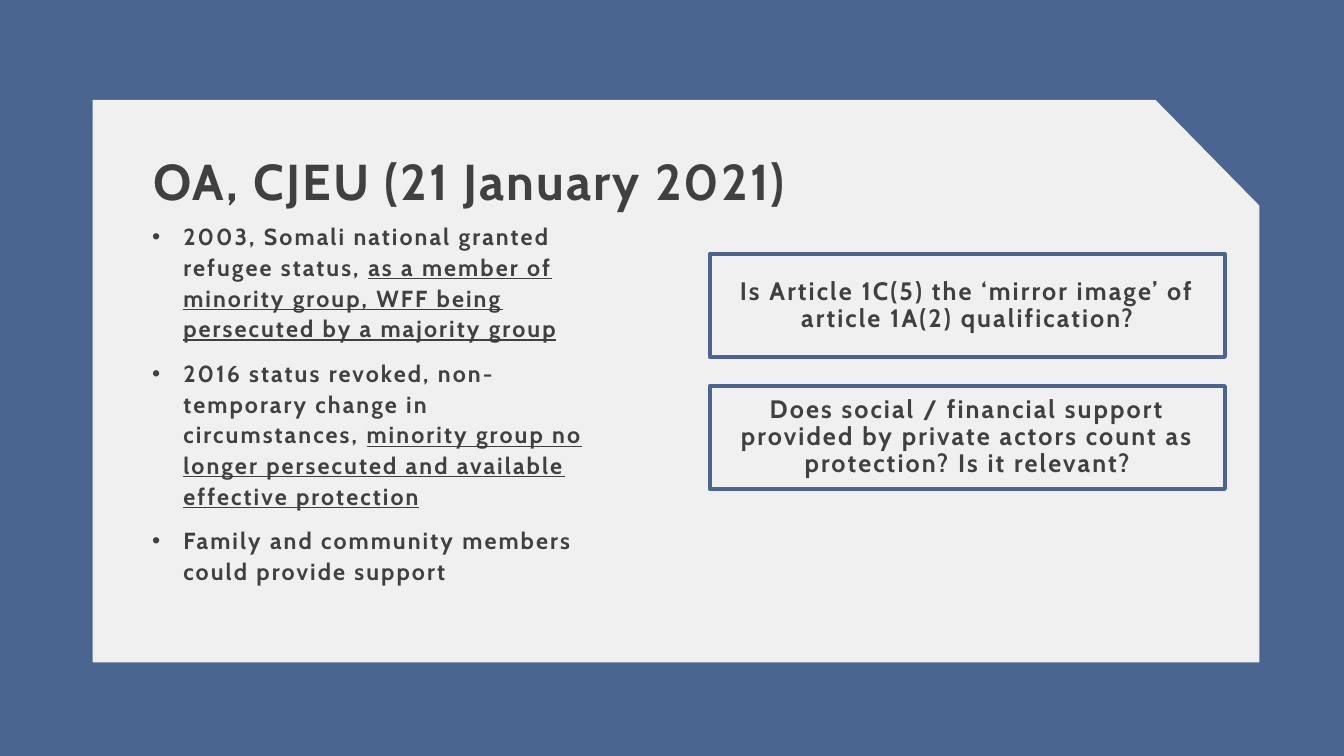
"""Build the slide on the OA judgment, with areas given in percent of the slide's size."""
from dataclasses import dataclass

import lxml.etree
import pptx
import pptx.dml.color
import pptx.enum.shapes
import pptx.enum.text
import pptx.oxml.ns
import pptx.util

WIDTH = pptx.util.Inches(13.33)
HEIGHT = pptx.util.Inches(7.5)
FONT = "Cabin"
COLOURS = {"blue": "4A6590", "paper": "F1F0F0", "ink": "404040"}
ALIGN = pptx.enum.text.PP_ALIGN
ANCHOR = pptx.enum.text.MSO_ANCHOR


@dataclass(frozen=True)
class Area:
    left: float
    top: float
    width: float
    height: float

    def emu(self) -> tuple[int, int, int, int]:
        return (across(self.left), down(self.top), across(self.width), down(self.height))


@dataclass(frozen=True)
class Phrase:
    text: str
    underlined: bool = False


PANEL = Area(6.9, 13.2, 86.8, 74.4)
CORNER_WIDTH, CORNER_HEIGHT = 7.73, 14
HEADING = Area(10.65, 20.13, 55.96, 10.8)
FACTS_AREA = Area(10.58, 28.4, 34.88, 55.73)
FIRST_QUESTION = Area(52.81, 33.6, 38.33, 13.6)
QUESTION_PITCH = 17.47

FACTS = [
    [
        Phrase("2003, Somali national granted refugee status, "),
        Phrase("as a member of minority group, WFF being persecuted by a majority group", True),
    ],
    [
        Phrase("2016 status revoked, non-temporary change in circumstances, "),
        Phrase("minority group no longer persecuted and available effective protection", True),
    ],
    [Phrase("Family and community members could provide support")],
]
QUESTIONS = [
    "Is Article 1C(5) the ‘mirror image’ of article 1A(2) qualification?",
    "Does social / financial support provided by private actors count as protection? Is it relevant?",
]


def across(percent: float) -> int:
    return round(WIDTH * percent / 100)


def down(percent: float) -> int:
    return round(HEIGHT * percent / 100)


def colour(name: str) -> pptx.dml.color.RGBColor:
    return pptx.dml.color.RGBColor.from_string(COLOURS[name])


def add_bullet(paragraph) -> None:
    properties = paragraph._p.get_or_add_pPr()
    indent = pptx.util.Inches(0.31)
    properties.set("marL", str(indent))
    properties.set("indent", str(-indent))
    for tag, attribute, value in (("a:buFont", "typeface", "Arial"), ("a:buChar", "char", "•")):
        element = lxml.etree.SubElement(properties, pptx.oxml.ns.qn(tag))
        element.set(attribute, value)


def write_text(frame, paragraphs: list[list[Phrase]], *, size: float, line_spacing: float = 0.9,
               align=ALIGN.LEFT, anchor=ANCHOR.TOP, bulleted: bool = False,
               gap: float = 0, tracking: float = 1.5) -> None:
    frame.word_wrap = True
    frame.vertical_anchor = anchor
    for index, phrases in enumerate(paragraphs):
        paragraph = frame.add_paragraph() if index else frame.paragraphs[0]
        if bulleted:
            add_bullet(paragraph)
        paragraph.alignment = align
        paragraph.line_spacing = line_spacing
        paragraph.space_before = pptx.util.Pt(gap if index else 0)
        for phrase in phrases:
            run = paragraph.add_run()
            run.text = phrase.text
            run.font.name = FONT
            run.font.size = pptx.util.Pt(size)
            run.font.bold = True
            run.font.underline = phrase.underlined
            run.font.color.rgb = colour("ink")
            run._r.get_or_add_rPr().set("spc", str(round(tracking * 100)))


def add_panel(slide) -> None:
    left, top, width, height = PANEL.emu()
    right, bottom = left + width, top + height
    outline = slide.shapes.build_freeform(left, top)
    outline.add_line_segments([
        (right - across(CORNER_WIDTH), top),
        (right, top + down(CORNER_HEIGHT)),
        (right, bottom),
        (left, bottom),
    ], close=True)
    panel = outline.convert_to_shape()
    panel.shadow.inherit = False
    panel.fill.solid()
    panel.fill.fore_color.rgb = colour("paper")
    panel.line.fill.background()


def add_question(slide, area: Area, question: str) -> None:
    card = slide.shapes.add_shape(pptx.enum.shapes.MSO_SHAPE.RECTANGLE, *area.emu())
    card.shadow.inherit = False
    card.fill.solid()
    card.fill.fore_color.rgb = colour("paper")
    card.line.color.rgb = colour("blue")
    card.line.width = pptx.util.Pt(3)
    write_text(card.text_frame, [[Phrase(question)]], size=18,
               align=ALIGN.CENTER, anchor=ANCHOR.MIDDLE)


def main() -> None:
    deck = pptx.Presentation()
    deck.slide_width, deck.slide_height = WIDTH, HEIGHT
    slide = deck.slides.add_slide(deck.slide_layouts[6])
    slide.background.fill.solid()
    slide.background.fill.fore_color.rgb = colour("blue")

    add_panel(slide)
    heading = slide.shapes.add_textbox(*HEADING.emu())
    write_text(heading.text_frame, [[Phrase("OA, CJEU (21 January 2021)")]], size=36)
    facts = slide.shapes.add_textbox(*FACTS_AREA.emu())
    write_text(facts.text_frame, FACTS, size=16.6, line_spacing=1.1, bulleted=True, gap=10)
    for row, question in enumerate(QUESTIONS):
        top = FIRST_QUESTION.top + row * QUESTION_PITCH
        area = Area(FIRST_QUESTION.left, top, FIRST_QUESTION.width, FIRST_QUESTION.height)
        add_question(slide, area, question)

    deck.save("out.pptx")


if __name__ == "__main__":
    main()
